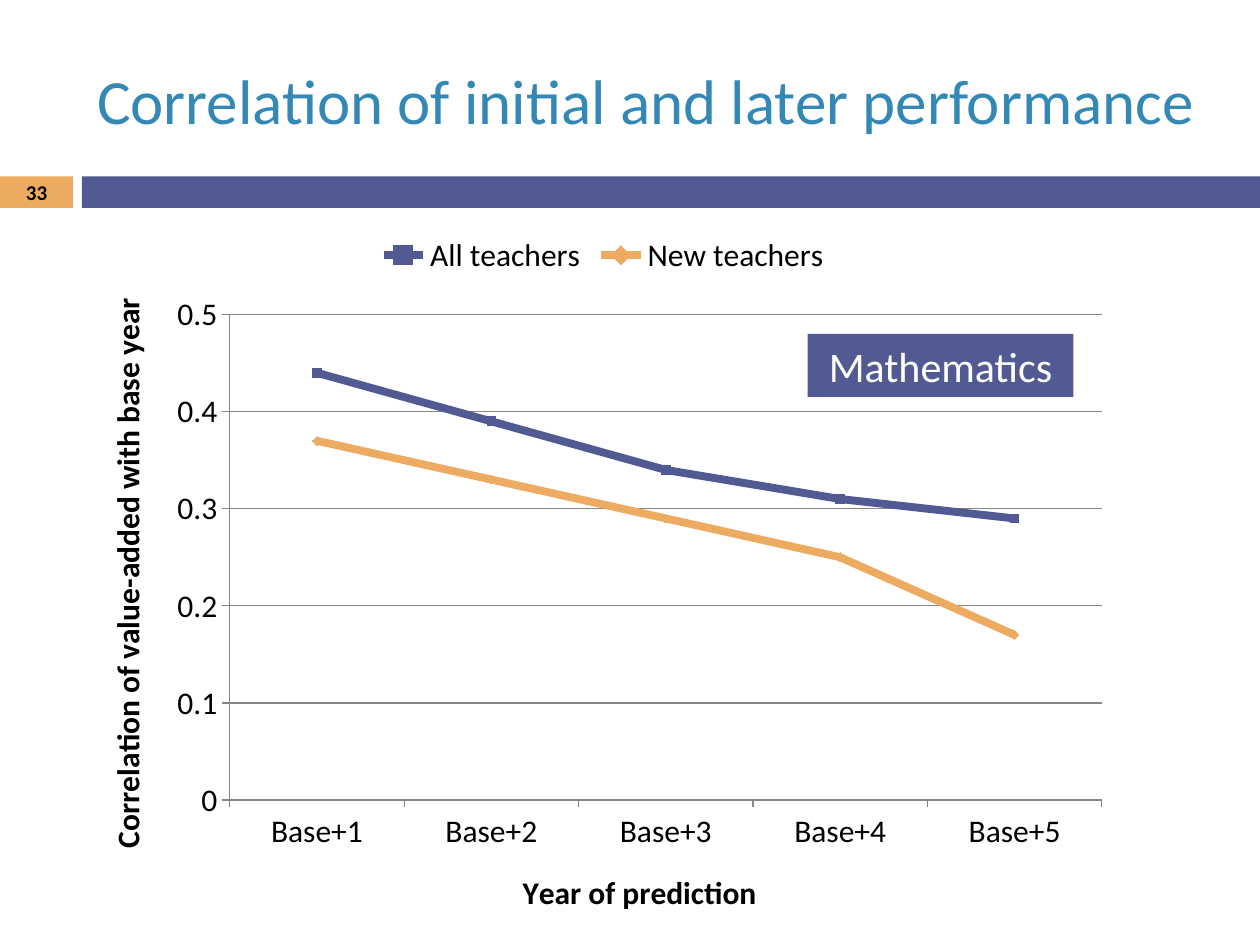
import pptx
import pptx.chart.data
import pptx.dml.color
import pptx.enum.chart
import pptx.enum.shapes
import pptx.enum.text
import pptx.oxml
import pptx.oxml.ns
import pptx.util

COLORS = {
    "indigo": "525A93",
    "orange": "EDAA61",
    "blue": "3488B6",
    "black": "000000",
    "white": "FFFFFF",
    "gray": "868686",
}
FONT = "Calibri"


def color(name):
    return pptx.dml.color.RGBColor.from_string(COLORS[name])


def format_font(font, size, name, bold=False):
    font.name = FONT
    font.size = pptx.util.Pt(size)
    font.bold = bold
    font.color.rgb = color(name)


def write_text(frame, text, size=18, name="black", bold=False, align="CENTER", anchor="MIDDLE"):
    frame.text = text
    frame.word_wrap = True
    frame.auto_size = pptx.enum.text.MSO_AUTO_SIZE.NONE
    frame.vertical_anchor = getattr(pptx.enum.text.MSO_ANCHOR, anchor)
    paragraph = frame.paragraphs[0]
    paragraph.alignment = getattr(pptx.enum.text.PP_ALIGN, align)
    format_font(paragraph.runs[0].font, size, name, bold)


class SlideBuilder:
    def __init__(self, presentation):
        self.width = presentation.slide_width
        self.height = presentation.slide_height
        self.slide = presentation.slides.add_slide(presentation.slide_layouts[5])

    def box(self, left, top, width, height):
        return (
            round(self.width * left / 100),
            round(self.height * top / 100),
            round(self.width * width / 100),
            round(self.height * height / 100),
        )

    def title(self, text, *place):
        shape = self.slide.shapes.title
        shape.left, shape.top, shape.width, shape.height = self.box(*place)
        write_text(shape.text_frame, text, size=36, name="blue", align="LEFT")

    def rectangle(self, fill, *place, text=None, **style):
        shape = self.slide.shapes.add_shape(
            pptx.enum.shapes.MSO_SHAPE.RECTANGLE, *self.box(*place))
        shape.shadow.inherit = False
        shape.fill.solid()
        shape.fill.fore_color.rgb = color(fill)
        shape.line.fill.background()
        if text:
            write_text(shape.text_frame, text, **style)

    def label(self, text, *place, **style):
        shape = self.slide.shapes.add_textbox(*self.box(*place))
        write_text(shape.text_frame, text, **style)

    def line_chart(self, categories, series_values, series_styles, titles, plot_area, *place):
        data = pptx.chart.data.CategoryChartData()
        data.categories = categories
        for series_name, values in series_values.items():
            data.add_series(series_name, values)
        chart = self.slide.shapes.add_chart(
            pptx.enum.chart.XL_CHART_TYPE.LINE_MARKERS, *self.box(*place), data).chart
        format_font(chart.font, 18, "black")
        chart.has_title = False
        chart.has_legend = True
        chart.legend.position = pptx.enum.chart.XL_LEGEND_POSITION.TOP
        chart.legend.include_in_layout = False
        chart.plots[0].vary_by_categories = False
        for axis, title in zip((chart.category_axis, chart.value_axis), titles):
            self.axis(axis, title)
        for series, (name, marker) in zip(chart.plots[0].series, series_styles):
            self.series(series, name, marker)
        self.place_plot(chart, plot_area)
        return chart

    def axis(self, axis, title):
        write_text(axis.axis_title.text_frame, title, bold=True)
        axis.major_tick_mark = pptx.enum.chart.XL_TICK_MARK.OUTSIDE
        axis.minor_tick_mark = pptx.enum.chart.XL_TICK_MARK.NONE
        axis.format.line.color.rgb = color("gray")

    def series(self, series, name, marker):
        series.smooth = False
        series.format.line.color.rgb = color(name)
        series.format.line.width = pptx.util.Pt(4.5)
        series.marker.style = getattr(pptx.enum.chart.XL_MARKER_STYLE, marker)
        series.marker.size = 5
        series.marker.format.fill.solid()
        series.marker.format.fill.fore_color.rgb = color(name)
        series.marker.format.line.color.rgb = color(name)

    def place_plot(self, chart, shares):
        plot_area = chart.plots[0]._element.getparent()
        for old_layout in plot_area.findall(pptx.oxml.ns.qn("c:layout")):
            plot_area.remove(old_layout)
        settings = [("layoutTarget", "inner"), ("xMode", "edge"), ("yMode", "edge")]
        settings += zip("xywh", shares)
        items = "".join(f'<c:{tag} val="{value}"/>' for tag, value in settings)
        plot_area.insert(0, pptx.oxml.parse_xml(
            f'<c:layout {pptx.oxml.ns.nsdecls("c")}>'
            f"<c:manualLayout>{items}</c:manualLayout></c:layout>"))


def main():
    presentation = pptx.Presentation()
    presentation.slide_width = pptx.util.Inches(10)
    presentation.slide_height = pptx.util.Inches(7.5)
    builder = SlideBuilder(presentation)

    band_top, band_height = 18.67, 3.33
    builder.rectangle("orange", 0, band_top, 5.8, band_height)
    builder.rectangle("indigo", 6.5, band_top, 93.5, band_height)
    builder.title("Correlation of initial and later performance", 6.7, 3.33, 89.2, 14.4)
    builder.label("33", 0, band_top, 5.8, band_height, size=12, bold=True)

    chart = builder.line_chart(
        [f"Base+{year}" for year in range(1, 6)],
        {
            "All teachers": (0.44, 0.39, 0.34, 0.31, 0.29),
            "New teachers": (0.37, 0.33, 0.29, 0.25, 0.17),
        },
        (("indigo", "SQUARE"), ("orange", "DIAMOND")),
        ("Year of prediction", "Correlation of value-added with base year"),
        (0.14, 0.13, 0.84, 0.67),
        6.7, 23.33, 82.4, 76.67,
    )
    value_axis = chart.value_axis
    value_axis.minimum_scale, value_axis.maximum_scale = 0, 0.5
    value_axis.major_unit = 0.1
    value_axis.tick_labels.number_format = "General"
    value_axis.tick_labels.number_format_is_linked = False
    value_axis.has_major_gridlines = True
    value_axis.major_gridlines.format.line.color.rgb = color("gray")

    builder.rectangle("indigo", 64.1, 35.33, 21.1, 6.67,
                      text="Mathematics", size=24, name="white")
    presentation.save("out.pptx")


if __name__ == "__main__":
    main()
